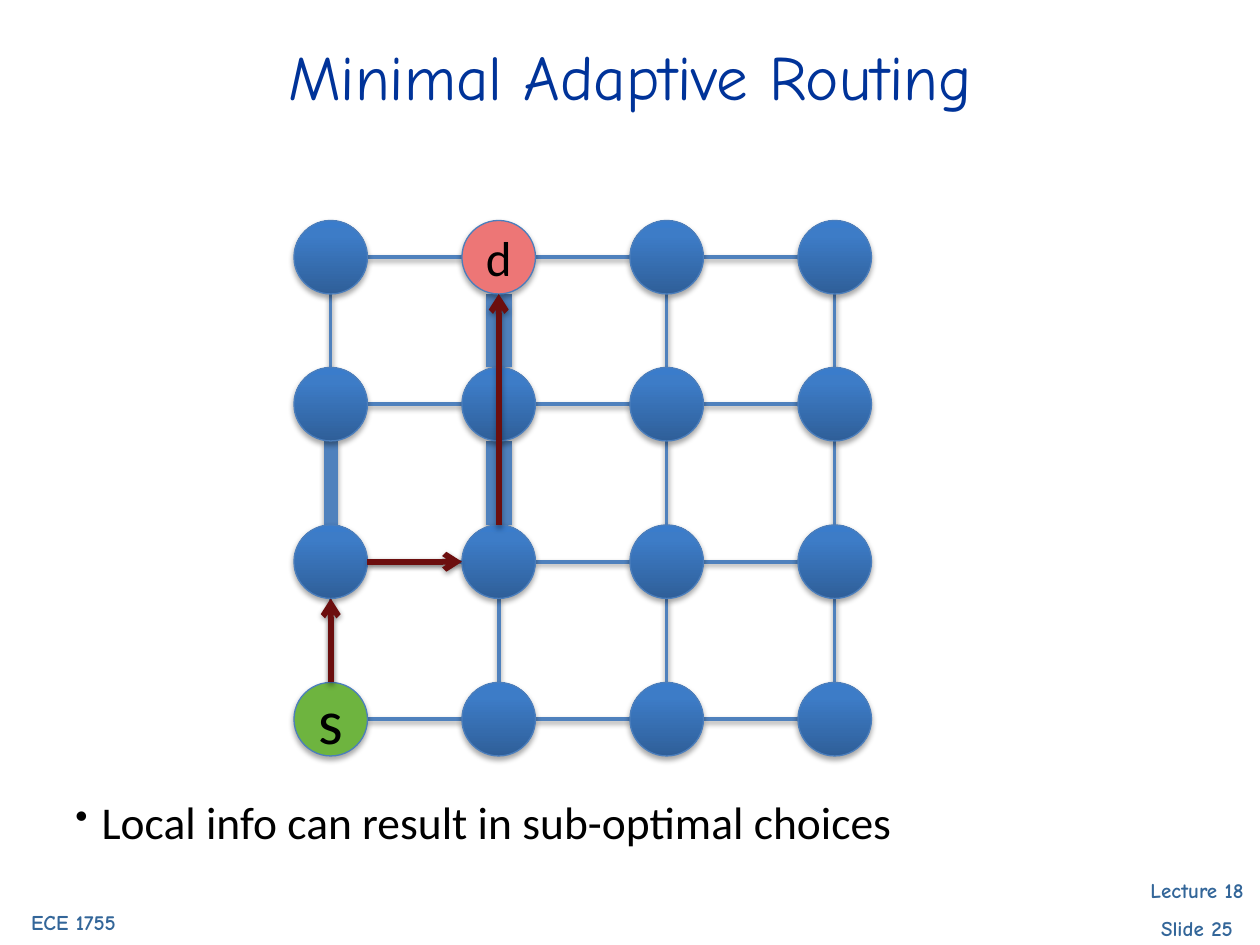
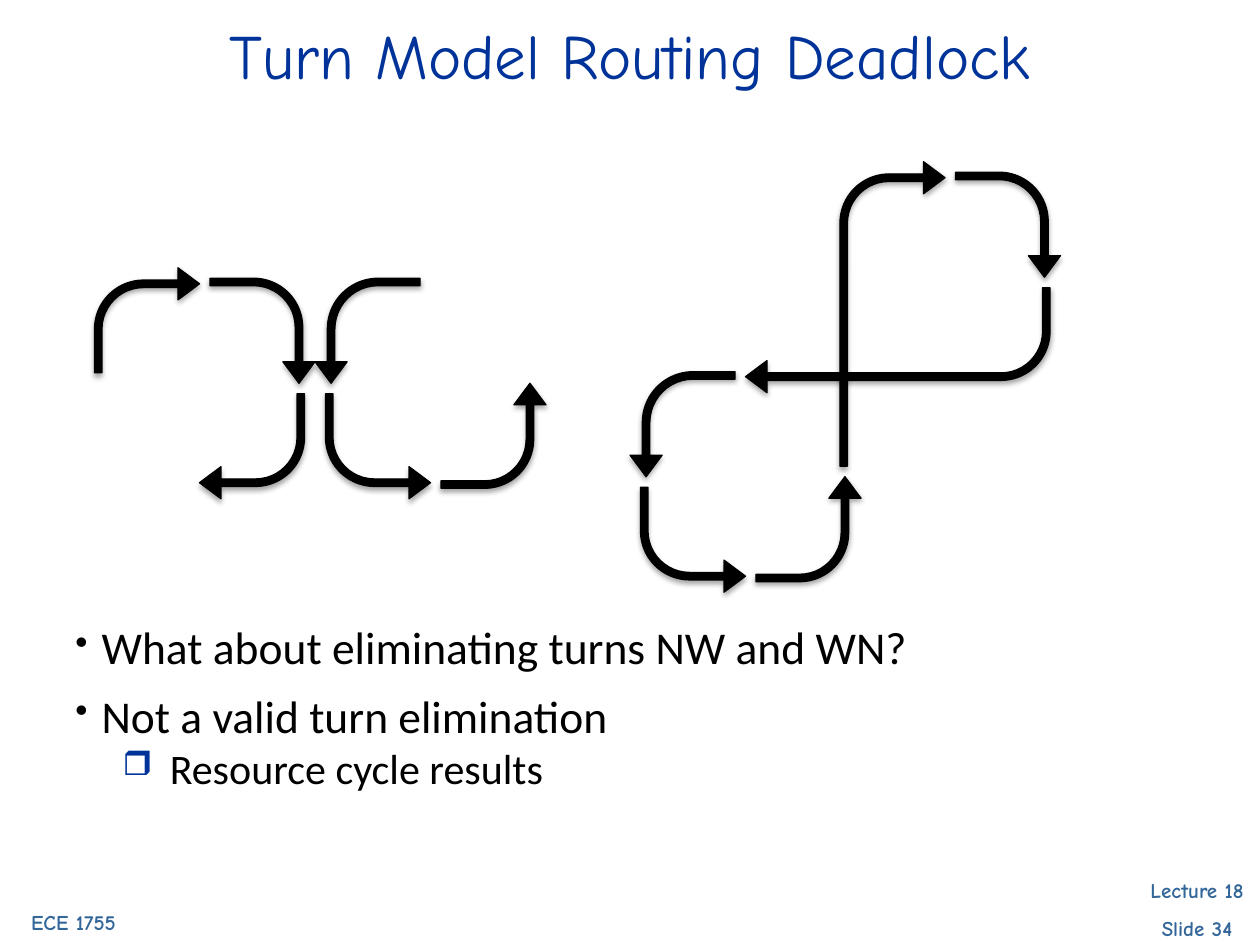
from copy import deepcopy

from lxml import etree
from pptx import Presentation
from pptx import util as u
from pptx.dml.color import RGBColor
from pptx.enum import shapes, text
from pptx.oxml.ns import qn

PX = 7620  # EMU per px, 120 px to the inch
W, H = 1200, 900
TITLE, FOOTER, BLACK = "003399", "336699", "000000"
LINK, ROUTE, RIM = "4F81BD", "6C0E0E", "4B7EBC"
SOURCE, DEST = "6EB43F", "ED7676"
NODE_STOPS = [(0, "2F5F99"), (0.8, "3D7CC7"), (1, "3A7CCB")]
HEAD_FONT, BODY_FONT = "Comic Neue", "Calibri"

# Node grid
NODE = 70
COLS = [0, 160, 320, 480]
ROWS = [0, 140, 290, 440]
LABELS = {(1, 0): ("d", 28, DEST), (0, 3): ("s", 36, SOURCE)}
WIDE_LINKS = {((0, 1), (0, 2)): 8, ((1, 0), (1, 1)): 15, ((1, 1), (1, 2)): 15}
ROUTE_STOPS = [(0, 3), (0, 2), (1, 2), (1, 0)]

# Turn arrows
TURN = 100

# level: indent, hanging, line spacing, space before, size, bullet, bullet colour
LEVELS = [(25, 25, 24, 15, 26, "•", None), (90, 45, 22, 7, 24, "❒", TITLE)]


def rgb(value):
    return RGBColor.from_string(value)


def px(*values):
    return [u.Emu(round(v * PX)) for v in values]


def style(p, size, font, color, bold=False):
    for r in p.runs:
        r.font.size, r.font.name, r.font.bold = u.Pt(size), font, bold
        r.font.color.rgb = rgb(color)


def add_shadow(sp, alpha, dist):
    """Call last, so that the effect follows the line in the properties."""
    effects = etree.SubElement(sp._element.spPr, qn("a:effectLst"))
    shadow = etree.SubElement(effects, qn("a:outerShdw"), blurRad="40000",
                              dist=str(dist), dir="5400000", rotWithShape="0")
    color = etree.SubElement(shadow, qn("a:srgbClr"), val=BLACK)
    etree.SubElement(color, qn("a:alpha"), val=str(alpha * 1000))


def add_lines(s, box, lines, size, color, bold=False, before=0):
    """Centred lines in the heading font."""
    tf = s.shapes.add_textbox(*px(*box)).text_frame
    tf.word_wrap = True
    tf.text = "\n".join(lines)
    for p in tf.paragraphs:
        p.alignment = text.PP_ALIGN.CENTER
        p.space_before = u.Pt(before)
        style(p, size, HEAD_FONT, color, bold)


def add_frame(s, title, title_box, number):
    """Title and footers."""
    add_lines(s, (1060, 830, 160, 73), ["Lecture 18", f"Slide {number}"],
              12, FOOTER, True, 7)
    add_lines(s, (-10, 860, 160, 36), ["ECE 1755"], 12, FOOTER, True, 7)
    add_lines(s, title_box, [title], 36, TITLE)


def add_bullets(s, box, items):
    """items: (level, wording)."""
    tf = s.shapes.add_textbox(*px(*box)).text_frame
    tf.word_wrap = True
    tf.text = "\n".join(wording for _, wording in items)
    for p, (level, _) in zip(tf.paragraphs, items):
        indent, hanging, spacing, before, size, mark, color = LEVELS[level]
        p.level = level
        p.line_spacing, p.space_before = u.Pt(spacing), u.Pt(before)
        style(p, size, BODY_FONT, BLACK)
        pPr = p._p.get_or_add_pPr()
        pPr.set("marL", str(indent * PX))
        pPr.set("indent", str(-hanging * PX))
        if color:
            bu = etree.SubElement(pPr, qn("a:buClr"))
            etree.SubElement(bu, qn("a:srgbClr"), val=color)
        etree.SubElement(pPr, qn("a:buSzPct"), val="80000")
        etree.SubElement(pPr, qn("a:buChar"), char=mark)


def add_node(s, x, y, label=None):
    sp = s.shapes.add_shape(shapes.MSO_SHAPE.OVAL, *px(x, y, NODE, NODE))
    sp.line.color.rgb, sp.line.width = rgb(RIM), u.Pt(0.75)
    if label:
        letter, size, color = label
        sp.fill.solid()
        sp.fill.fore_color.rgb = rgb(color)
        tf = sp.text_frame
        tf.text = letter
        tf.vertical_anchor = text.MSO_ANCHOR.MIDDLE
        tf.paragraphs[0].alignment = text.PP_ALIGN.CENTER
        style(tf.paragraphs[0], size, BODY_FONT, BLACK)
    else:
        sp.fill.gradient()
        sp.fill.gradient_angle = 90
        stops = sp._element.spPr.find(".//" + qn("a:gsLst"))
        stops.append(deepcopy(stops[-1]))
        for stop, (pos, color) in zip(sp.fill.gradient_stops, NODE_STOPS):
            stop.position, stop.color.rgb = pos, rgb(color)
    add_shadow(sp, 35, 23000)


def add_link(s, x, y, start, end, color, width, arrow=False):
    """Straight line between the facing edges of two nodes."""
    r = NODE // 2
    (x1, y1), (x2, y2) = [(x + COLS[c] + r, y + ROWS[w] + r)
                          for c, w in (start, end)]
    dx = r * ((x2 > x1) - (x2 < x1))
    dy = r * ((y2 > y1) - (y2 < y1))
    ln = s.shapes.add_connector(shapes.MSO_CONNECTOR.STRAIGHT,
                                *px(x1 + dx, y1 + dy, x2 - dx, y2 - dy))
    ln.line.color.rgb, ln.line.width = rgb(color), u.Pt(width)
    if arrow:
        etree.SubElement(ln.line._get_or_add_ln(), qn("a:tailEnd"), type="arrow")
    add_shadow(ln, 38, 20000)


def add_mesh(s, x, y):
    """Links, then nodes, then the route on top."""
    grid = [(c, w) for w in range(len(ROWS)) for c in range(len(COLS))]
    for c, w in grid:
        for end in ((c + 1, w), (c, w + 1)):
            if end in grid:
                width = WIDE_LINKS.get(((c, w), end), 2)
                add_link(s, x, y, (c, w), end, LINK, width)
    for c, w in grid:
        add_node(s, x + COLS[c], y + ROWS[w], LABELS.get((c, w)))
    for start, end in zip(ROUTE_STOPS, ROUTE_STOPS[1:]):
        add_link(s, x, y, start, end, ROUTE, 3.25, True)


def add_turn(s, x, y, angle, w=TURN, h=TURN, flip=False):
    sp = s.shapes.add_shape(shapes.MSO_SHAPE.BENT_ARROW, *px(x, y, w, h))
    bend = 0.483 if angle == 270 else 0.467
    for i, value in enumerate((0.071, 0.153, 0.205, bend)):
        sp.adjustments[i] = value
    sp.rotation = angle
    if flip:
        sp._element.spPr.find(qn("a:xfrm")).set("flipH", "1")
    sp.fill.solid()
    sp.fill.fore_color.rgb = sp.line.color.rgb = rgb(BLACK)
    sp.line.width = u.Pt(0.75)
    add_shadow(sp, 35, 23000)


def add_clockwise(s, x, y, stretch=0):
    """Three right turns; stretch lengthens the first and the last."""
    add_turn(s, x, y, 0, h=TURN + stretch)
    add_turn(s, x + 110, y + 10, 90)
    add_turn(s, x + 100 - stretch, y + 120, 180, w=TURN + stretch)


def add_counterclockwise(s, x, y):
    """Three left turns."""
    for dx, dy, angle in ((0, 0, 270), (10, 110, 180), (120, 100, 90)):
        add_turn(s, x + dx, y + dy, angle, flip=True)


def routing_slide(s):
    add_frame(s, "Minimal Adaptive Routing", (45, 30, 1110, 80), 25)
    add_bullets(s, (60, 762, 1080, 74),
                [(0, "Local info can result in sub-optimal choices")])
    add_mesh(s, 280, 210)


def deadlock_slide(s):
    add_frame(s, "Turn Model Routing Deadlock", (60, 10, 1080, 150), 34)
    add_bullets(s, (60, 596, 1080, 208),
                [(0, "What about eliminating turns NW and WN?"),
                 (0, "Not a valid turn elimination"),
                 (1, "Resource cycle results")])
    # Allowed turns
    add_clockwise(s, 90, 255)
    add_counterclockwise(s, 300, 265)
    # Resulting cycle
    add_clockwise(s, 800, 154, stretch=190)
    add_counterclockwise(s, 600, 354)


def main():
    prs = Presentation()
    prs.slide_width, prs.slide_height = px(W, H)
    for build in (routing_slide, deadlock_slide):
        build(prs.slides.add_slide(prs.slide_layouts[6]))
    prs.save("out.pptx")


if __name__ == "__main__":
    main()
